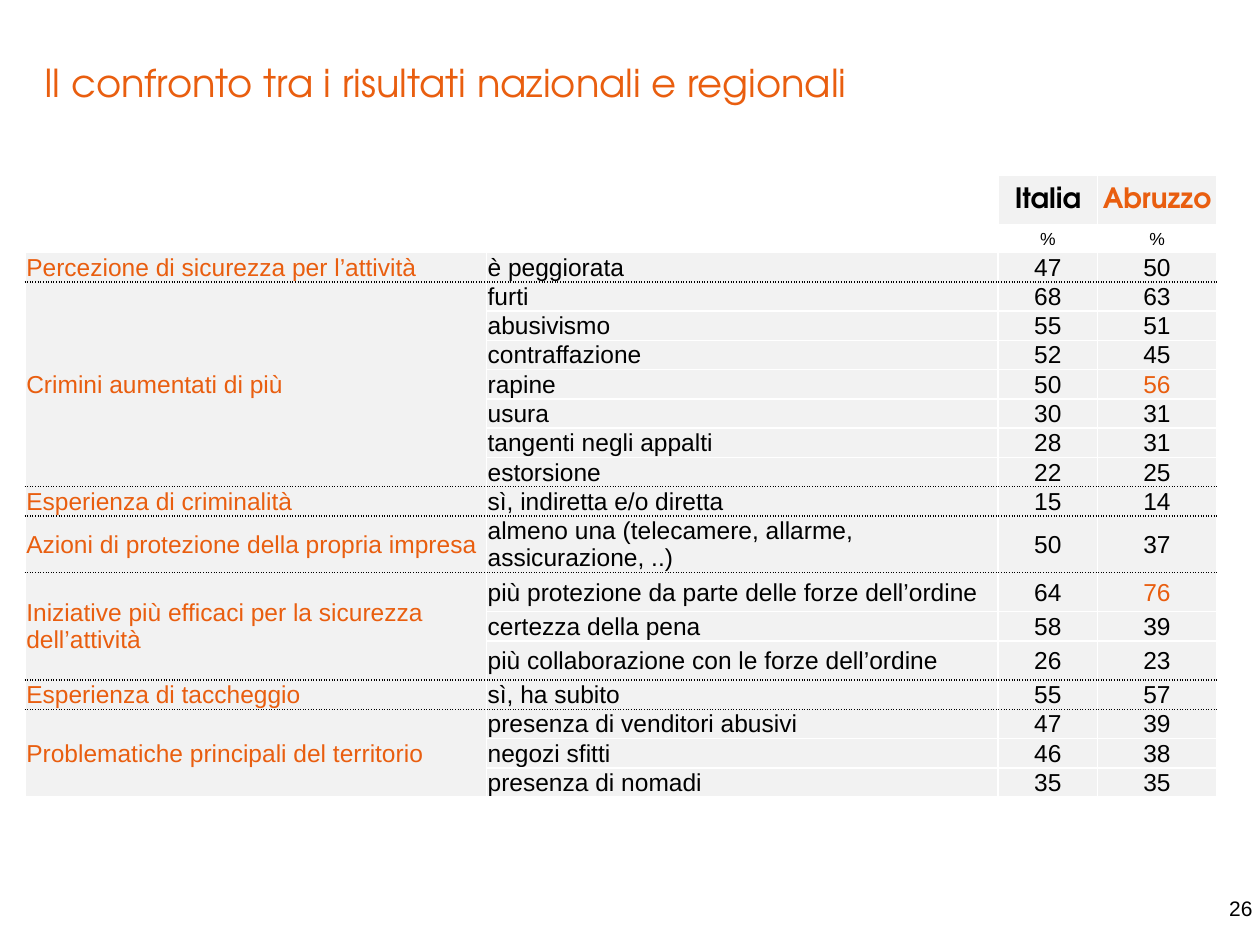
from lxml import etree
from pptx import Presentation
from pptx.dml.color import RGBColor
from pptx.enum import text
from pptx.oxml.ns import qn
from pptx.util import Cm, Pt

ORANGE, BLACK, GREY, WHITE = "E95E0F", "000000", "F2F2F2", "FFFFFF"
HEAD_FONT, BODY_FONT = "TeX Gyre Adventor", "Arial"
LEFT, CENTER, RIGHT = text.PP_ALIGN.LEFT, text.PP_ALIGN.CENTER, text.PP_ALIGN.RIGHT
BOTTOM, MIDDLE = text.MSO_ANCHOR.BOTTOM, text.MSO_ANCHOR.MIDDLE

TITLE = "Il confronto tra i risultati nazionali e regionali"
PAGE = "26"
REGIONS = [("Italia", BLACK), ("Abruzzo", ORANGE)]
GROUPS = [
    ("Percezione di sicurezza per l’attività", [("è peggiorata", 47, 50)]),
    ("Crimini aumentati di più", [
        ("furti", 68, 63),
        ("abusivismo", 55, 51),
        ("contraffazione", 52, 45),
        ("rapine", 50, 56),
        ("usura", 30, 31),
        ("tangenti negli appalti", 28, 31),
        ("estorsione", 22, 25),
    ]),
    ("Esperienza di criminalità", [("sì, indiretta e/o diretta", 15, 14)]),
    ("Azioni di protezione della propria impresa", [
        ("almeno una (telecamere, allarme, assicurazione, ..)", 50, 37),
    ]),
    ("Iniziative più efficaci per la sicurezza dell’attività", [
        ("più protezione da parte delle forze dell’ordine", 64, 76),
        ("certezza della pena", 58, 39),
        ("più collaborazione con le forze dell’ordine", 26, 23),
    ]),
    ("Esperienza di taccheggio", [("sì, ha subito", 55, 57)]),
    ("Problematiche principali del territorio", [
        ("presenza di venditori abusivi", 47, 39),
        ("negozi sfitti", 46, 38),
        ("presenza di nomadi", 35, 35),
    ]),
]
HIGHLIGHTS = {"rapine", "più protezione da parte delle forze dell’ordine"}

COL_WIDTHS = [9.3, 10.31, 2.01, 2.39]
HEAD_HEIGHTS = [1.01, 0.55]
ROW_HEIGHT = 0.59
TALL_ROWS = {
    "almeno una (telecamere, allarme, assicurazione, ..)": 1.14,
    "più protezione da parte delle forze dell’ordine": 0.79,
    "più collaborazione con le forze dell’ordine": 0.79,
}


def rgb(color):
    return RGBColor.from_string(color)


def write(tf, content, size=14, font=BODY_FONT, color=BLACK, bold=False,
          align=LEFT, anchor=MIDDLE):
    tf.word_wrap = True
    tf.vertical_anchor = anchor
    p = tf.paragraphs[0]
    p.alignment = align
    r = p.add_run()
    r.text = str(content)
    r.font.size = Pt(size)
    r.font.name = font
    r.font.bold = bold
    r.font.color.rgb = rgb(color)


def set_border(cell, side, color, dash):
    ln = etree.SubElement(cell._tc.get_or_add_tcPr(), qn(f"a:ln{side}"), w=str(Pt(1)))
    fill = etree.SubElement(ln, qn("a:solidFill"))
    etree.SubElement(fill, qn("a:srgbClr"), val=color)
    etree.SubElement(ln, qn("a:prstDash"), val=dash)


def style_cell(cell, filled, dotted_sides):
    """Set margins, borders and fill; borders must precede the fill in the XML."""
    cell.margin_left = cell.margin_right = cell.margin_top = Cm(0.02)
    cell.margin_bottom = 0
    cell.vertical_anchor = MIDDLE
    for side in "LRTB":
        dotted = side in dotted_sides
        set_border(cell, side, BLACK if dotted else WHITE, "sysDot" if dotted else "solid")
    if filled:
        cell.fill.solid()
        cell.fill.fore_color.rgb = rgb(GREY)
    else:
        cell.fill.background()


def add_results_table(s):
    heights = HEAD_HEIGHTS + [TALL_ROWS.get(item[0], ROW_HEIGHT)
                              for _, items in GROUPS for item in items]
    frame = s.shapes.add_table(len(heights), len(COL_WIDTHS), Cm(0.51), Cm(3.53),
                               Cm(sum(COL_WIDTHS)), Cm(sum(heights)))
    table = frame.table
    for column, width in zip(table.columns, COL_WIDTHS):
        column.width = Cm(width)
    for row, height in zip(table.rows, heights):
        row.height = Cm(height)

    for row in range(len(HEAD_HEIGHTS)):
        for col in range(len(COL_WIDTHS)):
            cell = table.cell(row, col)
            style_cell(cell, filled=row == 0 and col >= 2, dotted_sides="")
            if col < 2:
                p = cell.text_frame.paragraphs[0]
                etree.SubElement(p._p, qn("a:endParaRPr"), sz="1000")
    for col, (region, color) in enumerate(REGIONS, start=2):
        write(table.cell(0, col).text_frame, region, size=16, font=HEAD_FONT,
              color=color, bold=True, align=CENTER)
        write(table.cell(1, col).text_frame, "%", size=10, align=CENTER)

    row = len(HEAD_HEIGHTS)
    for group, (topic, items) in enumerate(GROUPS):
        first, last = row, row + len(items) - 1
        for label, italy, region in items:
            dotted = ("T" if row == first and group > 0 else "")
            dotted += ("B" if row == last and group < len(GROUPS) - 1 else "")
            for col in range(len(COL_WIDTHS)):
                # A merged topic cell carries the borders of its whole group.
                sides = dotted
                if col == 0:
                    sides = ("T" if group > 0 else "") + ("B" if group < len(GROUPS) - 1 else "")
                style_cell(table.cell(row, col), filled=True, dotted_sides=sides)
            write(table.cell(row, 1).text_frame, label)
            write(table.cell(row, 2).text_frame, italy, align=CENTER)
            write(table.cell(row, 3).text_frame, region, align=CENTER,
                  color=ORANGE if label in HIGHLIGHTS else BLACK)
            row += 1
        if last > first:
            table.cell(first, 0).merge(table.cell(last, 0))
        write(table.cell(first, 0).text_frame, topic, color=ORANGE)


def main():
    prs = Presentation()
    prs.slide_width, prs.slide_height = Cm(25.4), Cm(19.05)
    s = prs.slides.add_slide(prs.slide_layouts[5])

    title = s.shapes.title
    title.left, title.top, title.width, title.height = Cm(0.89), Cm(0.33), Cm(21.21), Cm(1.8)
    tf = title.text_frame
    tf.margin_left = tf.margin_right = tf.margin_top = tf.margin_bottom = 0
    write(tf, TITLE, size=22, font=HEAD_FONT, color=ORANGE, anchor=BOTTOM)

    add_results_table(s)

    page = s.shapes.add_textbox(Cm(17.32), Cm(17.32), Cm(8.18), Cm(1.37))
    write(page.text_frame, PAGE, size=12, align=RIGHT, anchor=BOTTOM)
    prs.save("out.pptx")


if __name__ == "__main__":
    main()
